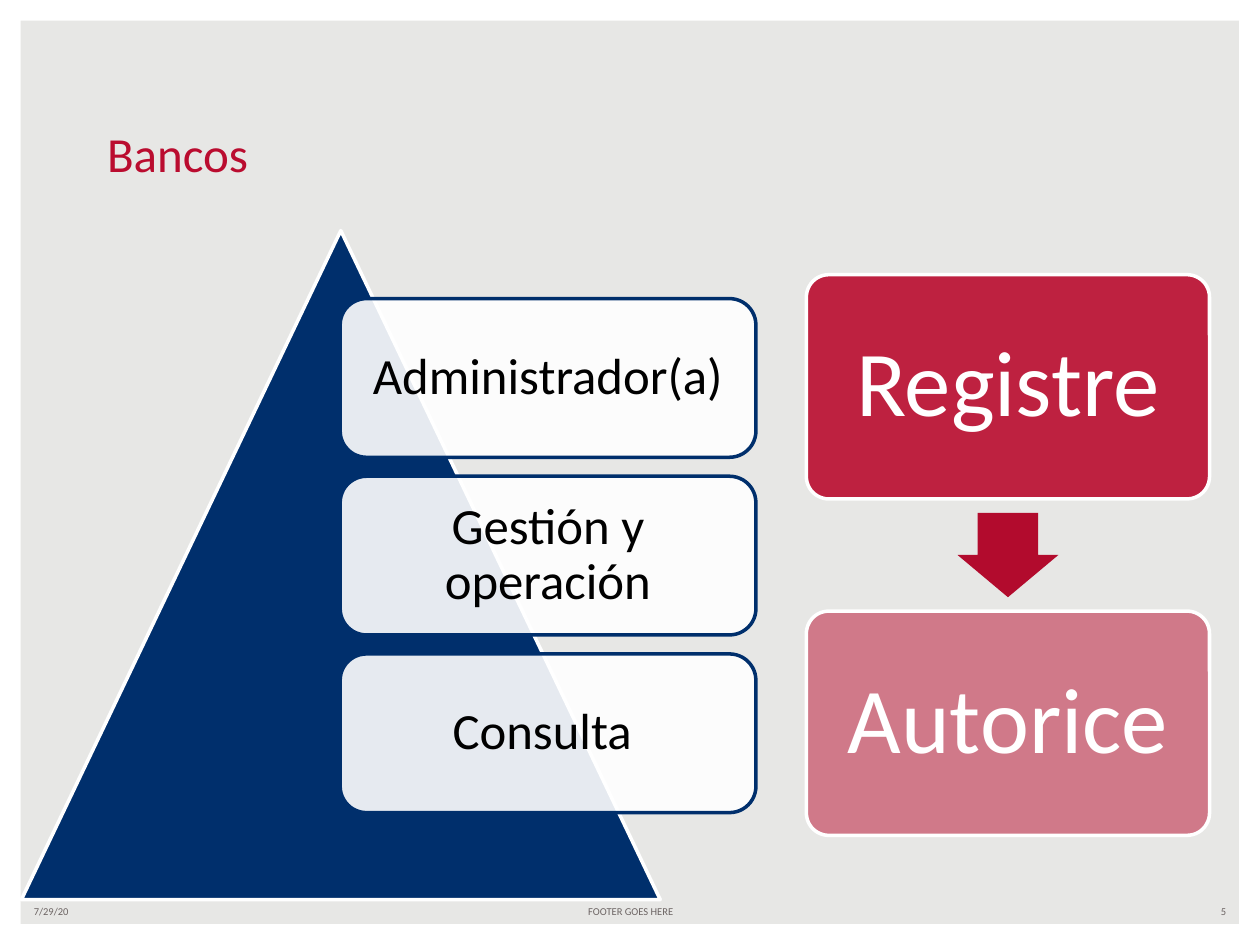
from lxml.etree import SubElement
from pptx import Presentation
from pptx.dml.color import RGBColor
from pptx.enum.shapes import MSO_SHAPE as Shape
from pptx.enum.text import MSO_ANCHOR as Anchor, MSO_AUTO_SIZE as AutoSize, PP_ALIGN as Align
from pptx.oxml.ns import qn
from pptx.util import Inches, Pt

WHITE = RGBColor(0xFF, 0xFF, 0xFF)
BLACK = RGBColor(0, 0, 0)
BACKGROUND = RGBColor(0xE7, 0xE7, 0xE5)
NAVY = RGBColor(0x00, 0x2F, 0x6C)
RED = RGBColor(0xBA, 0x0C, 0x2F)
ARROW_RED = RGBColor(0xB2, 0x0B, 0x2D)
GREY = RGBColor(0x6C, 0x64, 0x63)
FONT = "Calibri"


def set_text(text_frame, text, size, color, align, anchor=Anchor.MIDDLE):
    """Write one formatted paragraph and return it."""
    text_frame.word_wrap = True
    text_frame.auto_size = AutoSize.NONE
    text_frame.vertical_anchor = anchor
    paragraph = text_frame.paragraphs[0]
    paragraph.text = text
    paragraph.alignment = align
    paragraph.font.name = FONT
    paragraph.font.size = Pt(size)
    paragraph.font.color.rgb = color
    return paragraph


def add_shape(slide, kind, box, fill, line=None, adjustments=(), opacity=100):
    """Add a flat preset shape with an optional outline and opacity."""
    shape = slide.shapes.add_shape(kind, *map(Inches, box))
    shape.shadow.inherit = False
    for index, value in enumerate(adjustments):
        shape.adjustments[index] = value
    shape.fill.solid()
    shape.fill.fore_color.rgb = fill
    if opacity < 100:
        color = shape.fill._xPr.find(qn("a:solidFill"))[0]
        SubElement(color, qn("a:alpha"), val=str(opacity * 1000))
    if line is None:
        shape.line.fill.background()
    else:
        shape.line.color.rgb = line
        shape.line.width = Pt(2)
    return shape


def add_card(slide, box, text, size, color, inset, **style):
    """Add a rounded rectangle with a centred label."""
    card = add_shape(slide, Shape.ROUNDED_RECTANGLE, box, **style)
    frame = card.text_frame
    frame.margin_left = frame.margin_right = Inches(inset)
    frame.margin_top = frame.margin_bottom = Inches(inset)
    set_text(frame, text, size, color, Align.CENTER).line_spacing = 0.9


def add_footer(slide, left, width, text, align):
    """Add one small text at the foot of the slide."""
    box = slide.shapes.add_textbox(Inches(left), Inches(7.13), Inches(width), Inches(0.2))
    set_text(box.text_frame, text, 6, GREY, align)


def set_title(slide, text):
    """Place and format the title placeholder."""
    title = slide.shapes.title
    title.left, title.top = Inches(0.75), Inches(0.93)
    title.width, title.height = Inches(8.5), Inches(0.57)
    set_text(title.text_frame, text, 28, RED, Align.LEFT, Anchor.BOTTOM)


def add_pyramid(slide):
    """Add the triangle and its list of roles."""
    add_shape(slide, Shape.ISOSCELES_TRIANGLE, (0.17, 1.83, 5.07, 5.31), NAVY, WHITE)
    for index, role in enumerate(("Administrador(a)", "Gestión y operación", "Consulta ")):
        add_card(slide, (2.7, 2.37 + 1.41 * index, 3.3, 1.26), role, 29, BLACK, 0.12,
                 fill=WHITE, line=NAVY, opacity=90)


def add_process(slide):
    """Add the two steps and the arrow between them."""
    for top, step, opacity in ((2.18, "Registre", 90), (4.85, "Autorice", 50)):
        add_card(slide, (6.4, top, 3.2, 1.78), step, 53, WHITE, 0.22,
                 fill=RED, line=WHITE, adjustments=(0.1,), opacity=opacity)
    add_shape(slide, Shape.DOWN_ARROW, (7.6, 4.07, 0.8, 0.67), ARROW_RED,
              adjustments=(0.6, 0.5))


def main():
    """Build and save the slide."""
    presentation = Presentation()
    presentation.slide_width, presentation.slide_height = Inches(10), Inches(7.5)
    slide = presentation.slides.add_slide(presentation.slide_layouts[5])
    slide.background.fill.solid()
    slide.background.fill.fore_color.rgb = BACKGROUND
    add_shape(slide, Shape.FRAME, (0, 0, 10, 7.5), WHITE, adjustments=(0.022,))
    add_footer(slide, 0.17, 2.33, "7/29/20", Align.LEFT)
    add_footer(slide, 3.42, 3.17, "FOOTER GOES HERE", Align.CENTER)
    add_footer(slide, 7.5, 2.33, "5", Align.RIGHT)
    set_title(slide, "Bancos")
    add_pyramid(slide)
    add_process(slide)
    presentation.save("out.pptx")


if __name__ == "__main__":
    main()
